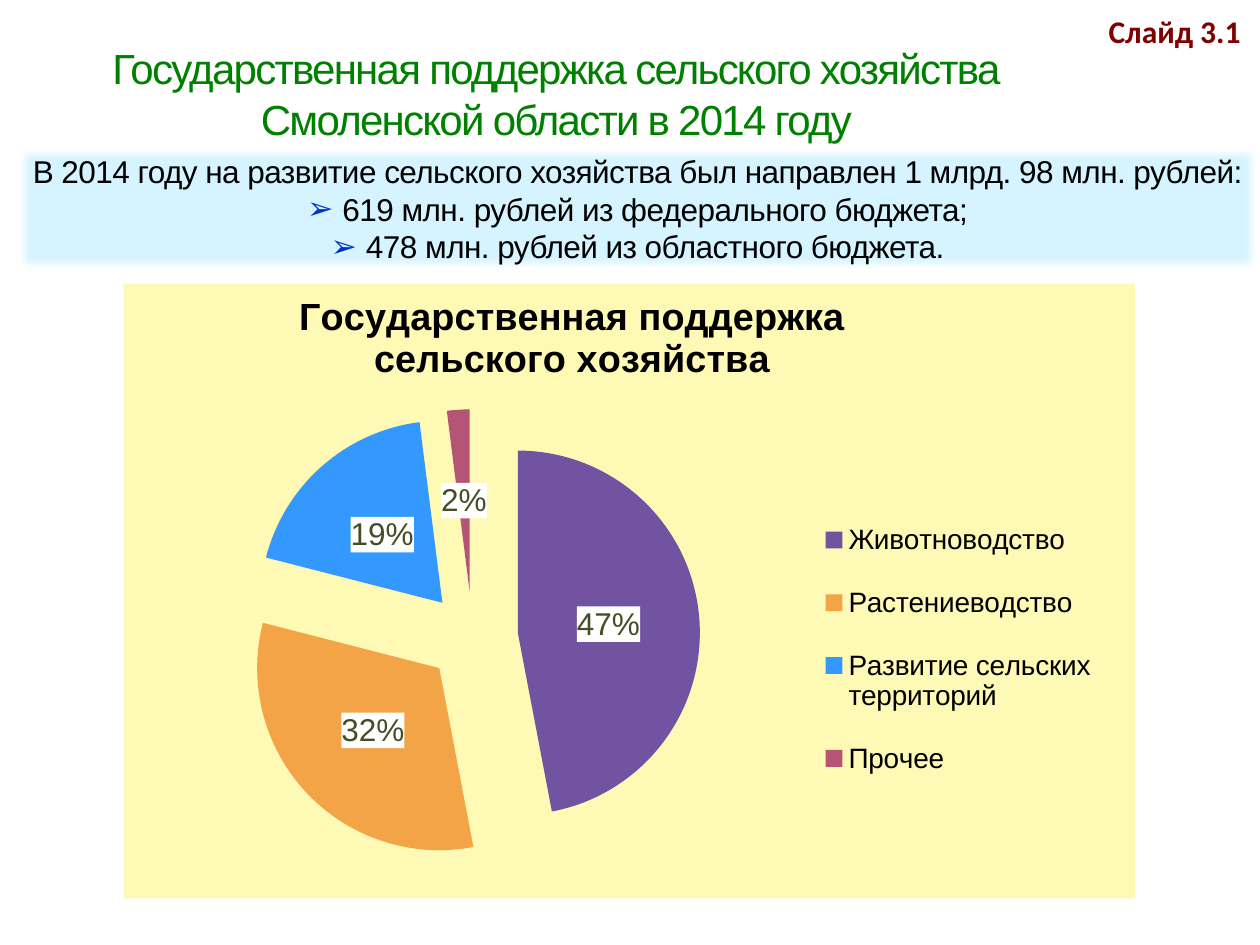
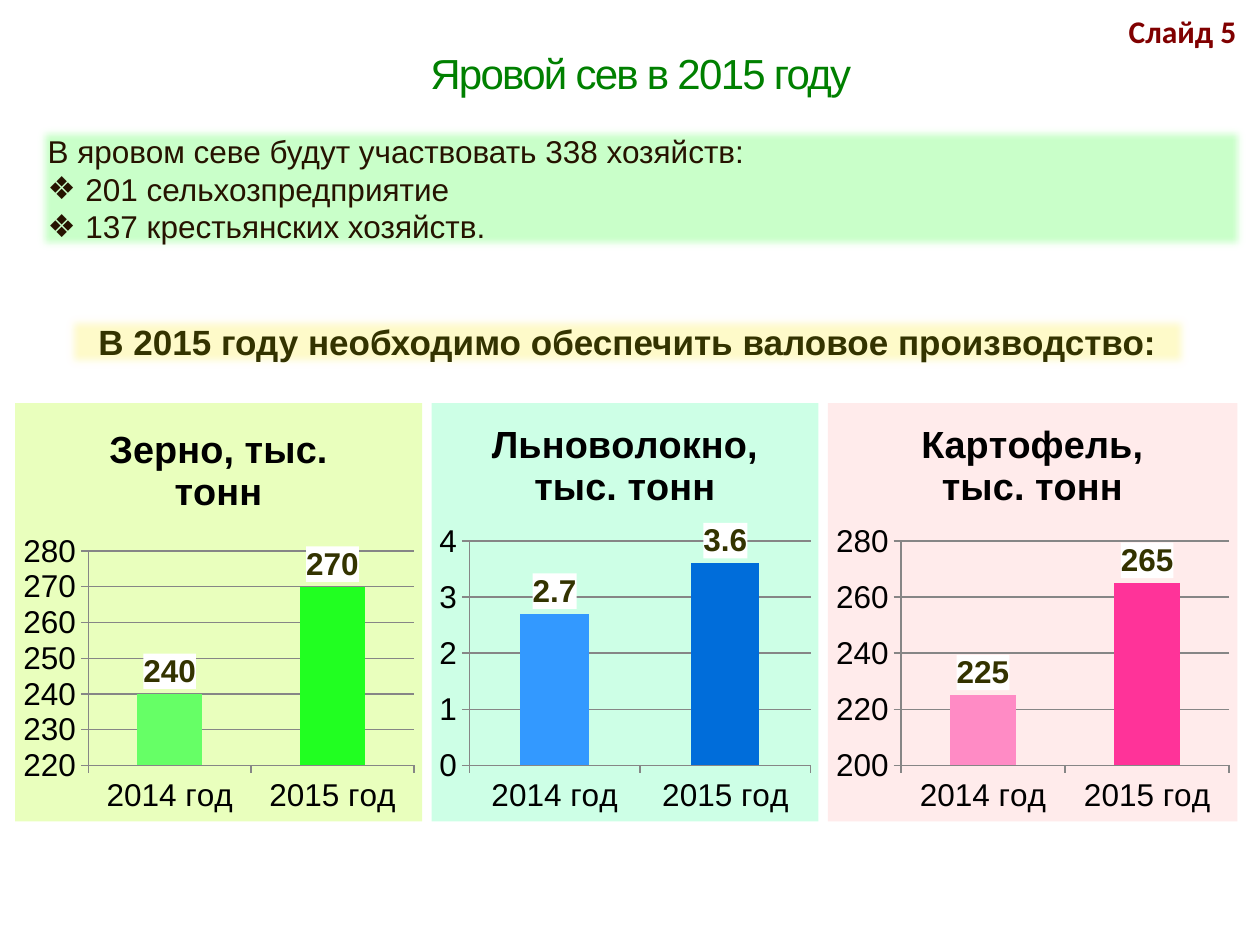
from dataclasses import dataclass

import pptx
import pptx.chart.data
import pptx.dml.color
import pptx.enum.chart
import pptx.enum.text
import pptx.oxml
import pptx.oxml.ns
import pptx.util

ALIGN = pptx.enum.text.PP_ALIGN
CHART = pptx.enum.chart.XL_CHART_TYPE
COLUMNS, ROWS = 100, 75


@dataclass(frozen=True)
class Theme:
    font: str = "Arial"
    tag_font: str = "Calibri"
    title: str = "008000"
    tag: str = "800000"
    ink: str = "000000"
    brown: str = "261300"
    olive: str = "333300"
    pie_label: str = "444D26"
    bullet: str = "0033CC"
    label_back: str = "FFFFFF"
    axis: str = "868686"
    title_size: float = 24
    heading_size: float = 20
    body_size: float = 18
    legend_size: float = 16
    chart_title_size: float = 21.6


THEME = Theme()


def rgb(color):
    return pptx.dml.color.RGBColor.from_string(color)


def cells(prs, left, top, width, height):
    column, row = prs.slide_width / COLUMNS, prs.slide_height / ROWS
    return [int(n * unit) for n, unit in
            ((left, column), (top, row), (width, column), (height, row))]


def xml(tag, inner="", **attrs):
    prefix = tag.split(":")[0]
    listed = "".join(f' {k}="{v}"' for k, v in attrs.items())
    spaces = " ".join(pptx.oxml.ns.nsdecls(n) for n in {prefix, "a"})
    return pptx.oxml.parse_xml(f"<{tag} {spaces}{listed}>{inner}</{tag}>")


def style_font(font, size, color, bold=False, name=THEME.font):
    font.size = pptx.util.Pt(size)
    font.bold = bold
    font.name = name
    font.color.rgb = rgb(color)


def add_run(p, text, size, color, bold=False, name=THEME.font, spacing=0):
    r = p.add_run()
    r.text = text
    style_font(r.font, size, color, bold, name)
    if spacing:
        r._r.get_or_add_rPr().set("spc", str(int(spacing * 100)))


def paragraphs(tf, lines):
    for i, line in enumerate(lines):
        yield (tf.paragraphs[0] if i == 0 else tf.add_paragraph()), line


def add_bullet(p, char, color, indent):
    pPr = p._p.get_or_add_pPr()
    hang = pptx.util.Inches(indent)
    pPr.set("marL", str(hang))
    pPr.set("indent", str(-hang))
    pPr.append(xml("a:buClr", f'<a:srgbClr val="{color}"/>'))
    pPr.append(xml("a:buFont", typeface=THEME.font))
    pPr.append(xml("a:buChar", char=char))


def add_title(prs, s, top, height, lines, first_right_indent=0):
    tf = s.shapes.add_textbox(*cells(prs, 2.8, top, 96.1, height)).text_frame
    tf.word_wrap = True
    for p, line in paragraphs(tf, lines):
        p.alignment = ALIGN.CENTER
        add_run(p, line, THEME.title_size, THEME.title, spacing=-1)
    if first_right_indent:
        pPr = tf.paragraphs[0]._p.get_or_add_pPr()
        pPr.set("marR", str(pptx.util.Inches(first_right_indent)))


def add_tag(prs, s, left, width, text):
    tf = s.shapes.add_textbox(*cells(prs, left, 0.5, width, 4)).text_frame
    tf.word_wrap = False
    add_run(tf.paragraphs[0], text, THEME.body_size, THEME.tag, True, THEME.tag_font)


def add_panel(prs, s, box, fill, lines, align, color, size=THEME.body_size,
              bold=False, spacing=0, bullet=None):
    sp = s.shapes.add_shape(pptx.enum.shapes.MSO_SHAPE.RECTANGLE, *cells(prs, *box))
    sp.shadow.inherit = False
    sp.fill.solid()
    sp.fill.fore_color.rgb = rgb(fill)
    sp.line.fill.background()
    effects = sp._element.spPr.find(pptx.oxml.ns.qn("a:effectLst"))
    effects.append(xml("a:softEdge", rad=pptx.util.Pt(5)))
    tf = sp.text_frame
    tf.word_wrap = True
    for i, (p, line) in enumerate(paragraphs(tf, lines)):
        p.alignment = align
        if bullet and i:
            add_bullet(p, *bullet)
        add_run(p, line, size, color, bold, spacing=spacing)


def fill_behind(txPr, color):
    txPr.addprevious(xml(
        "c:spPr",
        f'<a:solidFill><a:srgbClr val="{color}"/></a:solidFill><a:ln><a:noFill/></a:ln>'))


def set_layout(parent, index, x, y, w=None, h=None, inner=False):
    for old in parent.findall(pptx.oxml.ns.qn("c:layout")):
        parent.remove(old)
    parts = '<c:layoutTarget val="inner"/>' if inner else ""
    parts += '<c:xMode val="edge"/><c:yMode val="edge"/>'
    for key, value in zip("xywh", (x, y, w, h)):
        if value is not None:
            parts += f'<c:{key} val="{value}"/>'
    parent.insert(index, xml("c:layout", f"<c:manualLayout>{parts}</c:manualLayout>"))


def add_chart(prs, s, kind, box, title, values, fill, colors,
              label_color, label_bold, number_format):
    data = pptx.chart.data.CategoryChartData()
    data.categories = list(values)
    data.add_series("Series 1", list(values.values()))
    chart = s.shapes.add_chart(kind, *cells(prs, *box), data).chart
    style_font(chart.font, THEME.body_size, THEME.ink)
    fill_behind(chart._chartSpace.find(pptx.oxml.ns.qn("c:txPr")), fill)
    chart.has_legend = False
    chart.has_title = True
    for p, line in paragraphs(chart.chart_title.text_frame, title):
        add_run(p, line, THEME.chart_title_size, THEME.ink, True)
    chart.chart_title.include_in_layout = False
    plot = chart.plots[0]
    plot.vary_by_categories = kind == CHART.PIE_EXPLODED
    for i, color in enumerate(colors):
        point = plot.series[0].points[i].format.fill
        point.solid()
        point.fore_color.rgb = rgb(color)
    plot.has_data_labels = True
    labels = plot.data_labels
    labels.show_value = True
    labels.show_percentage = False
    labels.number_format = number_format
    labels.number_format_is_linked = False
    style_font(labels.font, THEME.body_size, label_color, label_bold)
    fill_behind(labels._element.find(pptx.oxml.ns.qn("c:txPr")), THEME.label_back)
    return chart


def add_pie(prs, s, box, title, values, fill, colors):
    chart = add_chart(prs, s, CHART.PIE_EXPLODED, box, title, values, fill, colors,
                      THEME.pie_label, False, '0"%"')
    chart.plots[0].data_labels.position = pptx.enum.chart.XL_LABEL_POSITION.CENTER
    chart.has_legend = True
    legend = chart.legend
    legend.position = pptx.enum.chart.XL_LEGEND_POSITION.RIGHT
    legend.include_in_layout = False
    style_font(legend.font, THEME.legend_size, THEME.ink)
    set_layout(legend._element, 1, 0.67, 0.34, 0.31, 0.51)
    set_layout(chart.chart_title._element, 1, 0.17, 0.01)
    plot_area = chart._chartSpace.chart.plotArea
    set_layout(plot_area, 0, 0.12, 0.2, 0.45, 0.75, inner=True)


def add_columns(prs, s, box, title, values, fill, colors, scale):
    chart = add_chart(prs, s, CHART.COLUMN_CLUSTERED, box, title, values, fill, colors,
                      THEME.olive, True, "General")
    plot = chart.plots[0]
    plot.gap_width = 150
    plot.data_labels.position = pptx.enum.chart.XL_LABEL_POSITION.OUTSIDE_END
    axis = chart.value_axis
    axis.minimum_scale, axis.maximum_scale, axis.major_unit = scale
    axis.has_major_gridlines = True
    for line in (axis.format.line, chart.category_axis.format.line,
                 axis.major_gridlines.format.line):
        line.color.rgb = rgb(THEME.axis)
        line.width = pptx.util.Pt(0.75)
    for each in (axis, chart.category_axis):
        each.major_tick_mark = pptx.enum.chart.XL_TICK_MARK.OUTSIDE


def build_support(prs, s):
    add_title(prs, s, 2.9, 9.1,
              ["Государственная поддержка сельского хозяйства",
               "Смоленской области в 2014 году"], first_right_indent=1.34)
    add_tag(prs, s, 87, 12.6, "Слайд 3.1")
    add_panel(prs, s, (1.2, 11.5, 98.8, 10.1), "D5F4FF",
              ["В 2014 году на развитие сельского хозяйства был направлен 1 млрд. 98 млн. рублей:",
               "619 млн. рублей из федерального бюджета;",
               "478 млн. рублей из областного бюджета."],
              ALIGN.CENTER, THEME.ink, spacing=-0.3, bullet=("➢", THEME.bullet, 0.28))
    add_pie(prs, s, (9.8, 22.5, 80.3, 48.8),
            ["Государственная поддержка", "сельского хозяйства"],
            {"Животноводство": 47, "Растениеводство": 32,
             "Развитие сельских территорий": 19, "Прочее": 2},
            "FEF9B4", ["7153A1", "F3A447", "3399FF", "B55475"])


def build_sowing(prs, s):
    add_title(prs, s, 3.3, 5, ["Яровой сев в 2015 году"])
    add_tag(prs, s, 88.6, 10.7, "Слайд 5")
    add_panel(prs, s, (2.8, 9.9, 96.1, 10.1), "C9FFC9",
              ["В яровом севе будут участвовать 338 хозяйств:",
               "201 сельхозпредприятие", "137 крестьянских хозяйств."],
              ALIGN.JUSTIFY, THEME.brown, bullet=("❖", THEME.brown, 0.3))
    crops = [
        (32.3, ["Зерно, тыс. тонн"], (240, 270), "E9FFBD",
         ["66FF66", "21FF21"], (220, 280, 10)),
        (30.7, ["Льноволокно,", "тыс. тонн"], (2.7, 3.6), "CDFFE6",
         ["3399FF", "006DDA"], (0, 4, 1)),
        (32.5, ["Картофель,", "тыс. тонн"], (225, 265), "FFEBEB",
         ["FF8BC5", "FF3399"], (200, 280, 20)),
    ]
    left, gap = 1.2, 0.75
    for width, title, harvest, fill, colors, scale in crops:
        values = dict(zip(("2014 год", "2015 год"), harvest))
        add_columns(prs, s, (left, 32, width, 33.2), title, values, fill, colors, scale)
        left += width + gap
    add_panel(prs, s, (5.1, 24.9, 89.4, 4.4), "FEFAC9",
              ["В 2015 году необходимо обеспечить валовое производство:"],
              ALIGN.CENTER, THEME.olive, THEME.heading_size, bold=True)


def main():
    prs = pptx.Presentation()
    prs.slide_width = pptx.util.Inches(10)
    prs.slide_height = pptx.util.Inches(7.5)
    for build in (build_support, build_sowing):
        build(prs, prs.slides.add_slide(prs.slide_layouts[6]))
    prs.save("out.pptx")


if __name__ == "__main__":
    main()
